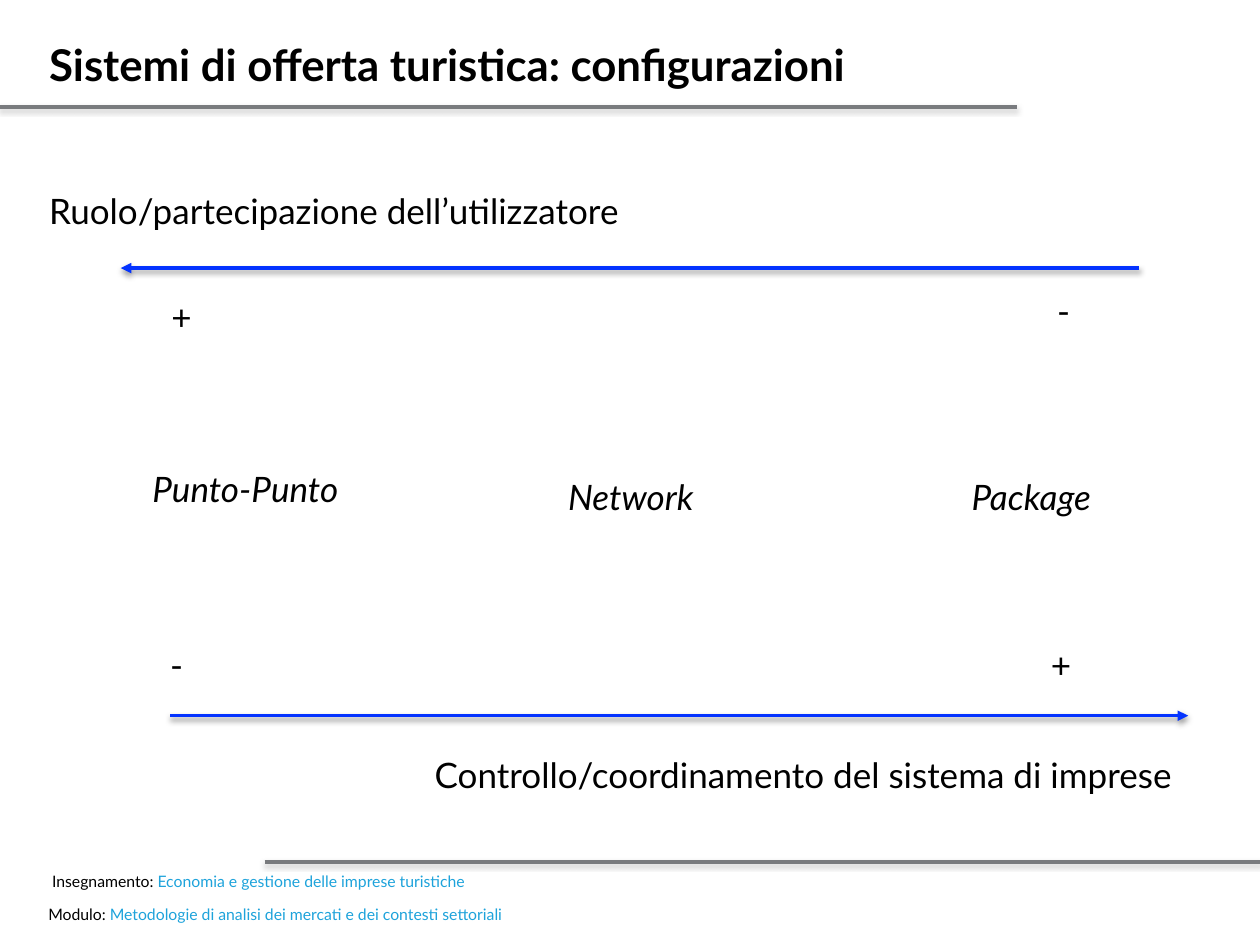
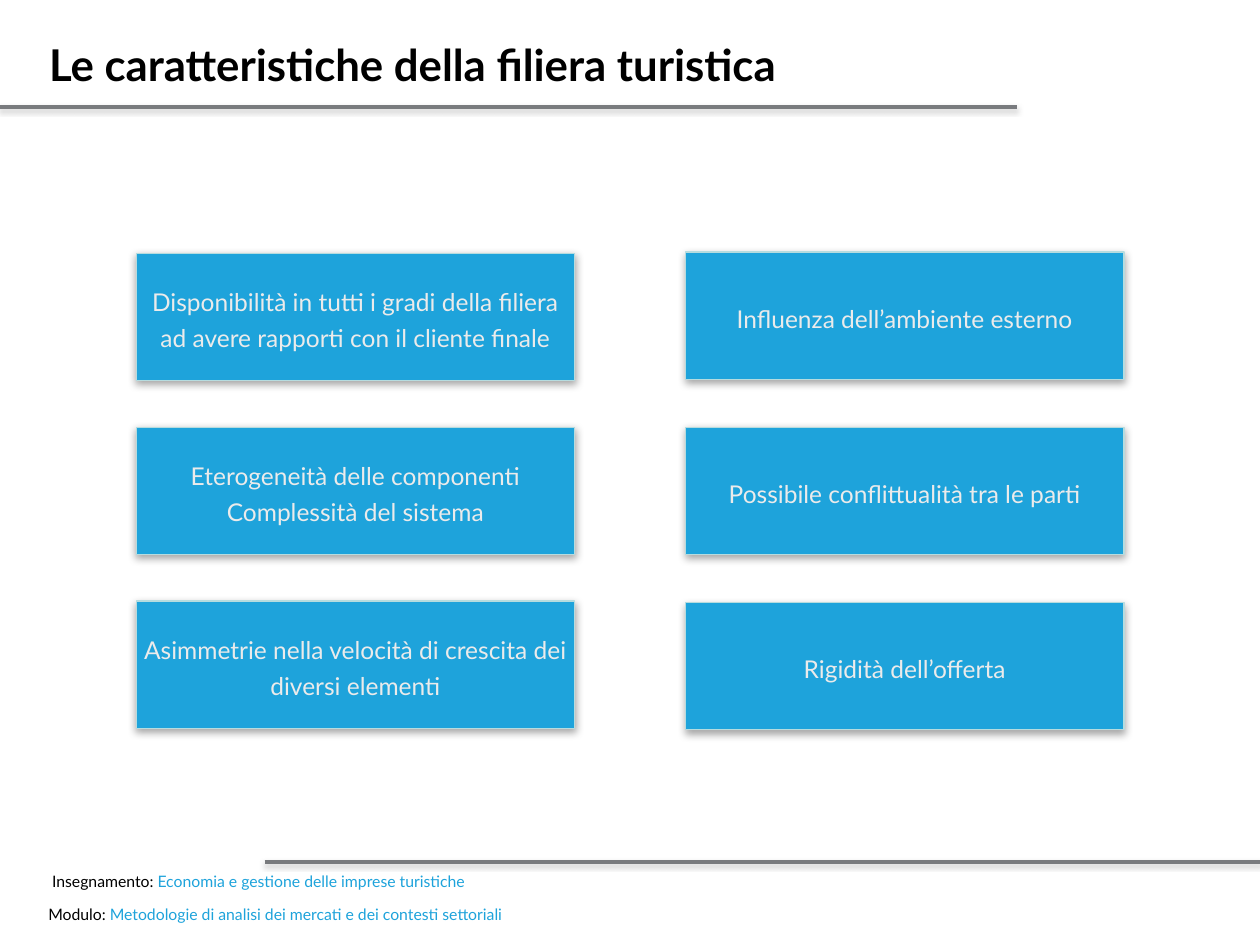
"""Build two slides on tourism supply systems and the tourism supply chain."""
from dataclasses import dataclass

from lxml import etree
from pptx import Presentation
from pptx.dml.color import RGBColor
from pptx.enum.shapes import MSO_CONNECTOR, MSO_SHAPE
from pptx.enum.text import MSO_ANCHOR, PP_ALIGN
from pptx.oxml.ns import qn
from pptx.util import Pt

STRAIGHT = MSO_CONNECTOR.STRAIGHT
RECTANGLE = MSO_SHAPE.RECTANGLE
TOP, MIDDLE = MSO_ANCHOR.TOP, MSO_ANCHOR.MIDDLE
LEFT, CENTER, RIGHT, JUSTIFY = PP_ALIGN.LEFT, PP_ALIGN.CENTER, PP_ALIGN.RIGHT, PP_ALIGN.JUSTIFY

FONT = "Lato"
COLORS = {
    "black": "000000",
    "gray": "797B7E",
    "rule_shadow": "808080",
    "arrow": "0433FF",
    "accent": "1EA3DB",
    "card_edge": "B6DCDF",
    "card_text": "EBEBEB",
}
PAGE_WIDTH, PAGE_HEIGHT = 720, 540
MARGIN = 28.1
CARD_WIDTH, CARD_HEIGHT = 250.6, 72.7


@dataclass(frozen=True)
class Shadow:
    color: str
    opacity: int
    blur: float
    distance: float


@dataclass(frozen=True)
class Rule:
    start: float
    end: float
    y: float
    color: str
    shadow: Shadow
    arrow: bool = False


@dataclass(frozen=True)
class Footer:
    lead: str
    text: str
    right: float
    top: float


@dataclass(frozen=True)
class Label:
    text: str
    left: float
    top: float
    width: float
    align: PP_ALIGN = LEFT
    italic: bool = False


@dataclass(frozen=True)
class CardColumn:
    left: float
    top: float
    pitch: float
    texts: tuple[str, ...]


RULE_SHADOW = Shadow("rule_shadow", 38, 3, 1.6)
ARROW_SHADOW = Shadow("black", 38, 3, 1.6)
CARD_SHADOW = Shadow("black", 35, 5, 1.8)

PAGE_RULES = (
    Rule(0, 581, 61.2, "gray", RULE_SHADOW),
    Rule(151.2, PAGE_WIDTH, 492.5, "gray", RULE_SHADOW),
)
FOOTERS = (
    Footer("Insegnamento: ", "Economia e gestione delle imprese turistiche", 265.5, 498.2),
    Footer("Modulo: ", "Metodologie di analisi dei mercati e dei contesti settoriali", 286.7, 517.3),
)
ARROWS = (
    Rule(651, 69, 153.2, "arrow", ARROW_SHADOW, arrow=True),
    Rule(97.2, 679, 409, "arrow", ARROW_SHADOW, arrow=True),
)
LABELS = (
    Label("Ruolo/partecipazione dell’utilizzatore", MARGIN, 103.7, 664),
    Label("Controllo/coordinamento del sistema di imprese", 248.4, 425.5, 440),
    Label("+", 97.9, 164.2, 20),
    Label("-", 604.1, 160.6, 20),
    Label("-", 97.2, 362.9, 20),
    Label("+", 600.5, 362.9, 20),
    Label("Punto-Punto", 87.1, 262.1, 126, italic=True),
    Label("Network", 297.4, 267.1, 126, CENTER, True),
    Label("Package", 526.3, 267.1, 126, CENTER, True),
)
CARD_COLUMNS = (
    CardColumn(77.8, 144.7, 99.4, (
        "Disponibilità in tutti i gradi della filiera ad avere rapporti con il cliente finale",
        "Eterogeneità delle componenti\nComplessità del sistema",
        "Asimmetrie nella velocità di crescita dei diversi elementi",
    )),
    CardColumn(391.7, 144, 100.1, (
        "Influenza dell’ambiente esterno",
        "Possibile conflittualità tra le parti",
        "Rigidità dell’offerta",
    )),
)


def rgb(name: str) -> RGBColor:
    return RGBColor.from_string(COLORS[name])


def write(box, text: str, *, size: float, color: str = "black", lead: str = "",
          align: PP_ALIGN = LEFT, anchor: MSO_ANCHOR = TOP, spacing: float = 1.0,
          bold: bool = False, italic: bool = False) -> None:
    frame = box.text_frame
    frame.word_wrap = True
    frame.vertical_anchor = anchor
    frame.margin_left = frame.margin_right = frame.margin_top = frame.margin_bottom = 0
    for index, line in enumerate(text.split("\n")):
        para = frame.add_paragraph() if index else frame.paragraphs[0]
        para.alignment = align
        para.line_spacing = spacing
        for content, tint in ((lead, "black"), (line, color)):
            if content:
                span = para.add_run()
                span.text = content
                span.font.name = FONT
                span.font.size = Pt(size)
                span.font.bold = bold
                span.font.italic = italic
                span.font.color.rgb = rgb(tint)


def add_text(page, left: float, top: float, width: float, height: float, text: str, **style) -> None:
    box = page.shapes.add_textbox(Pt(left), Pt(top), Pt(width), Pt(height))
    write(box, text, **style)


def cast_shadow(shape, shadow: Shadow) -> None:
    effects = etree.SubElement(shape._element.spPr, qn("a:effectLst"))
    outer = etree.SubElement(effects, qn("a:outerShdw"), blurRad=str(Pt(shadow.blur)),
                             dist=str(Pt(shadow.distance)), dir="5400000", rotWithShape="0")
    tint = etree.SubElement(outer, qn("a:srgbClr"), val=COLORS[shadow.color])
    etree.SubElement(tint, qn("a:alpha"), val=str(shadow.opacity * 1000))


def draw_rule(page, rule: Rule) -> None:
    line = page.shapes.add_connector(STRAIGHT, Pt(rule.start), Pt(rule.y), Pt(rule.end), Pt(rule.y))
    line.line.color.rgb = rgb(rule.color)
    line.line.width = Pt(2)
    if rule.arrow:
        etree.SubElement(line.line._get_or_add_ln(), qn("a:tailEnd"), type="triangle")
    cast_shadow(line, rule.shadow)


def draw_label(page, label: Label) -> None:
    add_text(page, label.left, label.top, label.width, 34.6, label.text, size=20,
             align=label.align, italic=label.italic, spacing=1.2)


def draw_cards(page, column: CardColumn) -> None:
    for row, text in enumerate(column.texts):
        card = page.shapes.add_shape(RECTANGLE, Pt(column.left), Pt(column.top + row * column.pitch),
                                     Pt(CARD_WIDTH), Pt(CARD_HEIGHT))
        card.fill.solid()
        card.fill.fore_color.rgb = rgb("accent")
        card.line.color.rgb = rgb("card_edge")
        card.line.width = Pt(0.75)
        cast_shadow(card, CARD_SHADOW)
        write(card, text, size=14, color="card_text", align=CENTER, anchor=MIDDLE, spacing=1.2)


def add_page(deck, title: str):
    page = deck.slides.add_slide(deck.slide_layouts[6])
    for rule in PAGE_RULES:
        draw_rule(page, rule)
    for footer in FOOTERS:
        add_text(page, 10, footer.top, footer.right - 10, 19.4, footer.text,
                 lead=footer.lead, size=9, color="accent", align=RIGHT)
    add_text(page, MARGIN, 21.6, 664, 41, title, size=25, bold=True, align=JUSTIFY)
    return page


def main() -> None:
    deck = Presentation()
    deck.slide_width, deck.slide_height = Pt(PAGE_WIDTH), Pt(PAGE_HEIGHT)

    page = add_page(deck, "Sistemi di offerta turistica: configurazioni")
    for arrow in ARROWS:
        draw_rule(page, arrow)
    for label in LABELS:
        draw_label(page, label)

    page = add_page(deck, "Le caratteristiche della filiera turistica")
    for column in CARD_COLUMNS:
        draw_cards(page, column)

    deck.save("out.pptx")


if __name__ == "__main__":
    main()
